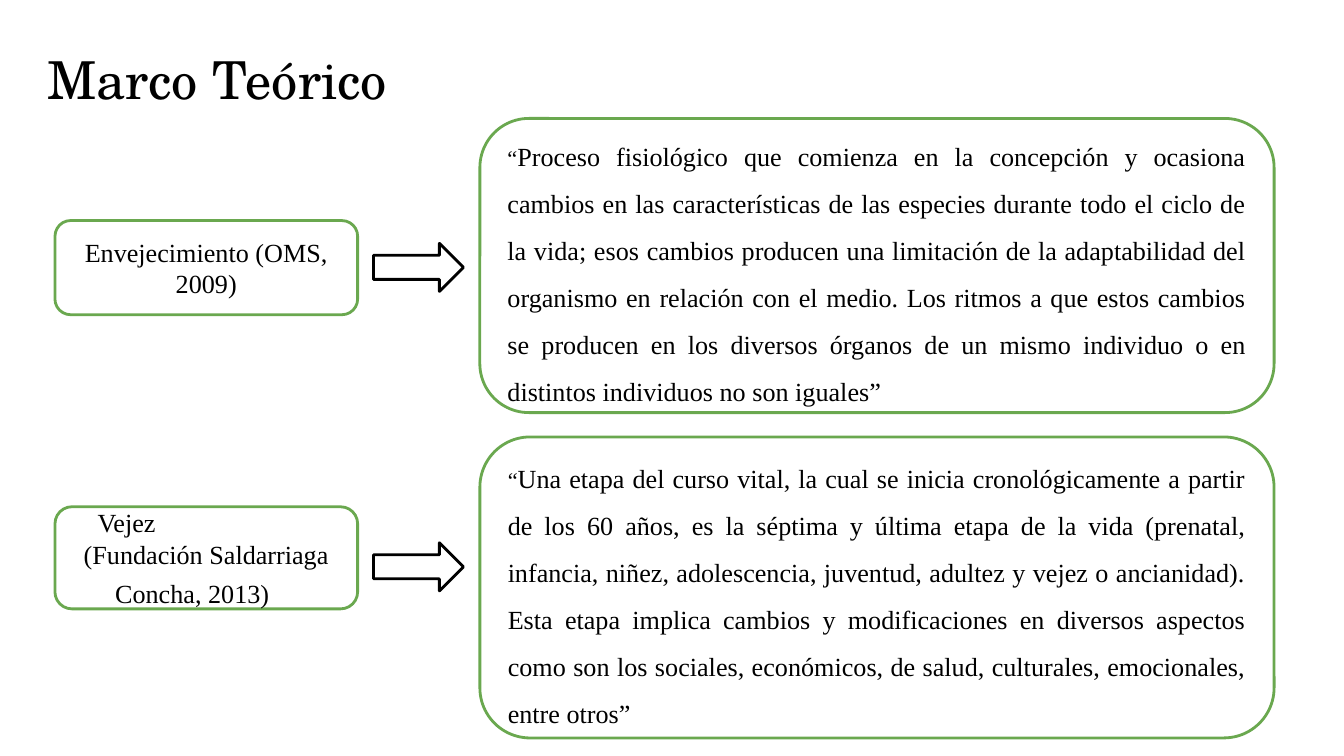
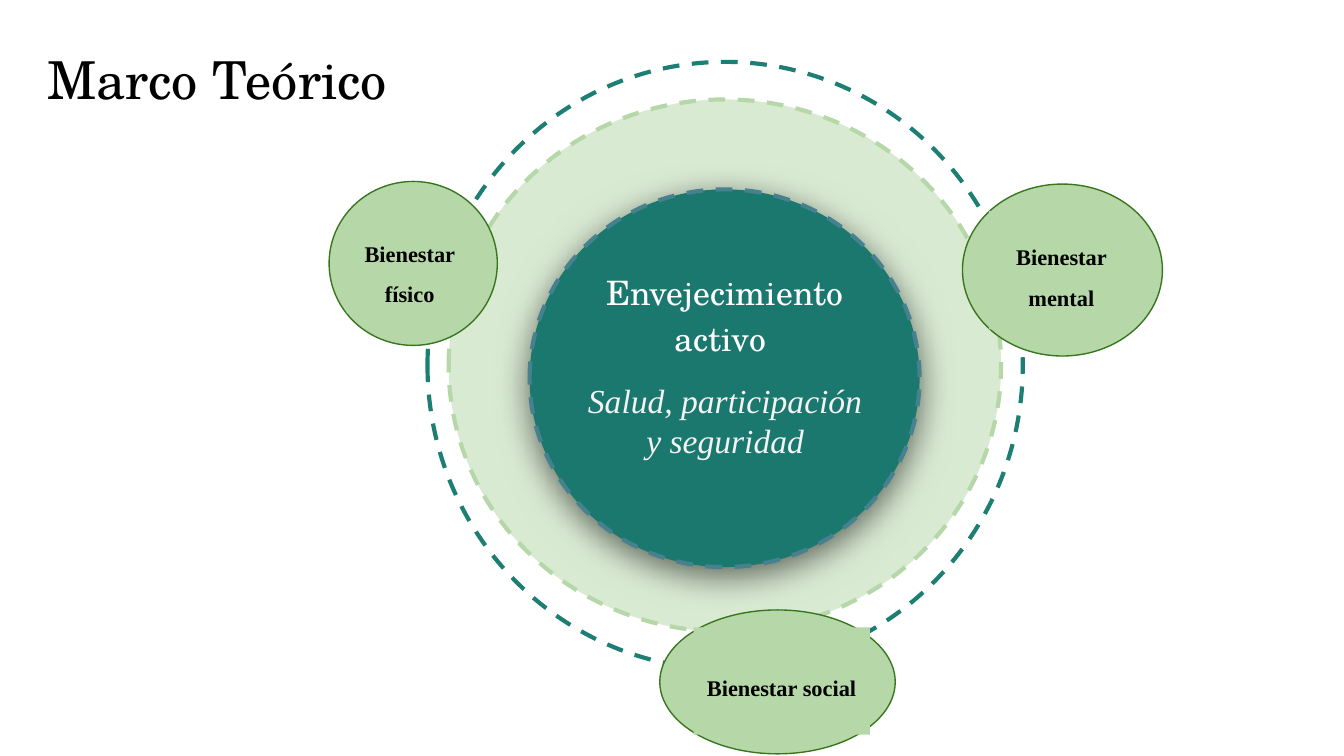
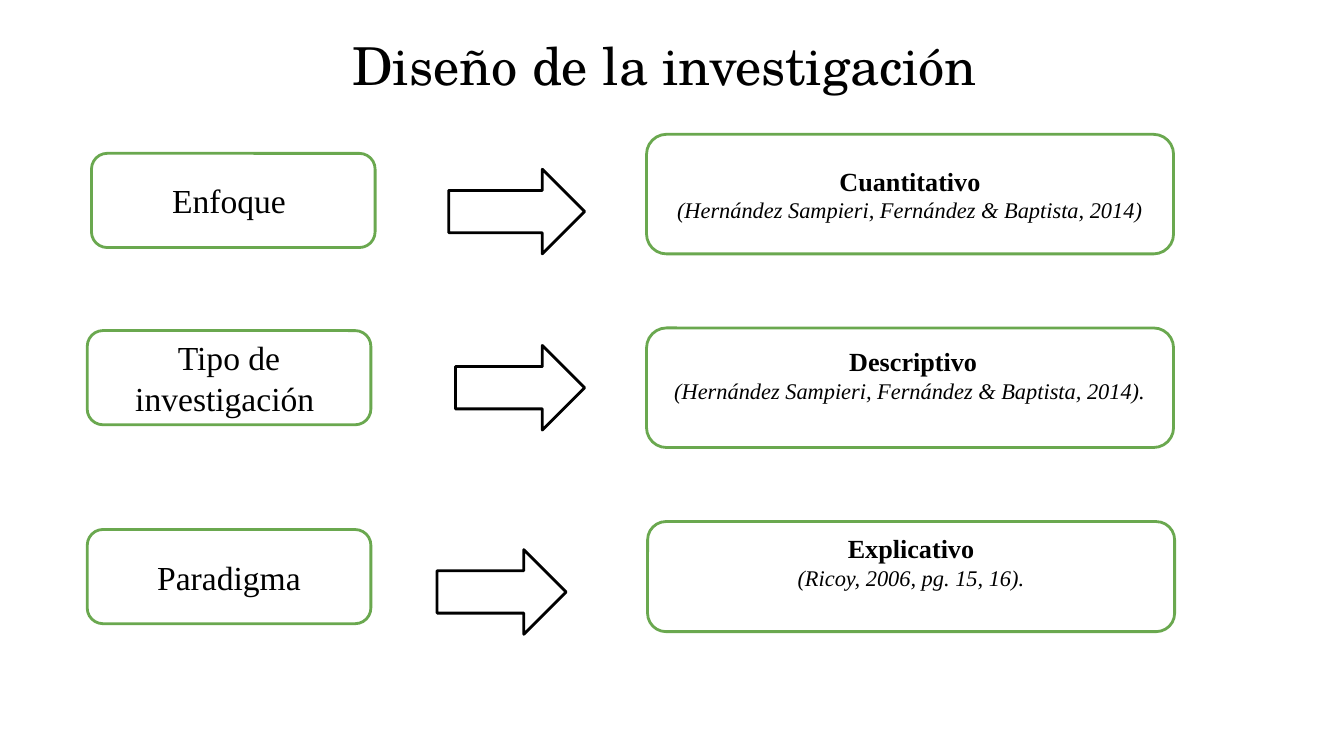
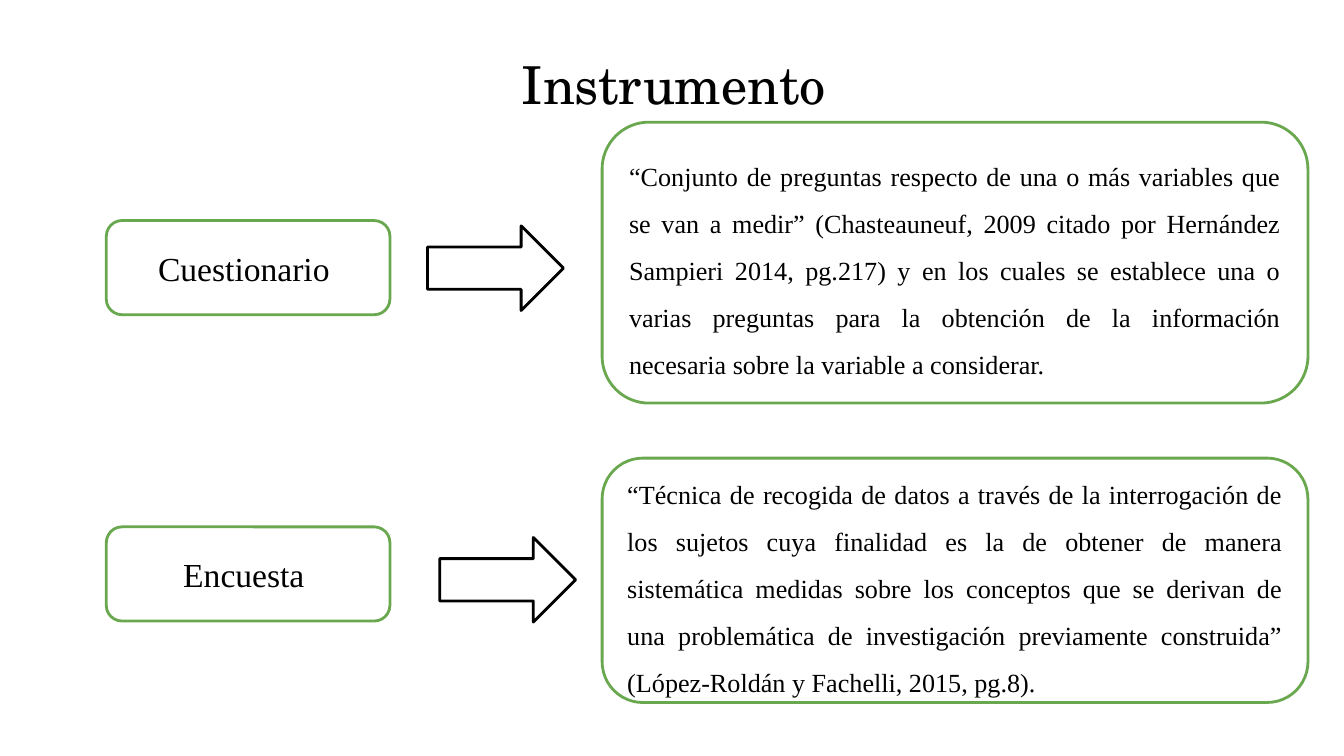
from lxml import etree
from pptx import Presentation
from pptx import util as u
from pptx.dml.color import RGBColor
from pptx.enum import dml, shapes, text
from pptx.oxml.ns import qn

GREEN, BLACK, WHITE = "6AA84F", "000000", "FFFFFF"
SAGE, LEAF = "B6D7A8", "38761D"
HEAD, BODY = "TeX Gyre Schola", "Times New Roman"
KIND = shapes.MSO_SHAPE
CENTER, LEFT, JUSTIFY = (text.PP_ALIGN.CENTER, text.PP_ALIGN.LEFT,
                         text.PP_ALIGN.JUSTIFY)
INSET = 0.25


def color(hex_value):
    return RGBColor.from_string(hex_value)


def run(words, size, font=BODY, ink=BLACK, **fmt):
    return dict(text=words, size=size, name=font, ink=ink, **fmt)


def para(*runs, align=CENTER, left=0, right=0, **fmt):
    """Describe a paragraph; left and right are its margins in cm."""
    return dict(runs=runs, left=left, right=right,
                fmt=dict(alignment=align, **fmt))


def write(sp, paras, bottom=INSET, anchor=text.MSO_ANCHOR.MIDDLE):
    tf = sp.text_frame
    frame = dict(word_wrap=True, vertical_anchor=anchor,
                 margin_left=u.Cm(INSET), margin_right=u.Cm(INSET),
                 margin_top=u.Cm(INSET), margin_bottom=u.Cm(bottom))
    for key, value in frame.items():
        setattr(tf, key, value)
    for i, spec in enumerate(paras):
        p = tf.add_paragraph() if i else tf.paragraphs[0]
        for key, value in spec["fmt"].items():
            setattr(p, key, value)
        for key, side in (("marL", "left"), ("marR", "right")):
            if spec[side]:
                p._p.get_or_add_pPr().set(key, str(u.Cm(spec[side])))
        for fmt in spec["runs"]:
            r = p.add_run()
            r.text = fmt["text"]
            r.font.color.rgb = color(fmt["ink"])
            for key, value in fmt.items():
                if key == "size":
                    r.font.size = u.Pt(value)
                elif key not in ("text", "ink"):
                    setattr(r.font, key, value)


def label(slide, box, *paras, **fmt):
    write(slide.shapes.add_textbox(*map(u.Cm, box)), paras, **fmt)


def draw(slide, kind, box, fill=None, line=None, width=1.5, dashed=False):
    sp = slide.shapes.add_shape(kind, *map(u.Cm, box))
    sp.shadow.inherit = False
    if fill:
        sp.fill.solid()
        sp.fill.fore_color.rgb = color(fill)
    else:
        sp.fill.background()
    if line:
        sp.line.color.rgb = color(line)
        sp.line.width = u.Pt(width)
        if dashed:
            sp.line.dash_style = dml.MSO_LINE.DASH
    else:
        sp.line.fill.background()
    return sp


def add_glow(sp):
    """Give the shape a soft shadow falling downwards."""
    effects = sp._element.spPr.find(qn("a:effectLst"))
    shadow = etree.SubElement(effects, qn("a:outerShdw"),
                              blurRad=str(u.Pt(18)), dist=str(u.Pt(4)),
                              dir="5400000", algn="ctr", rotWithShape="0")
    ink = etree.SubElement(shadow, qn("a:srgbClr"), val=BLACK)
    etree.SubElement(ink, qn("a:alpha"), val="55000")


def new_slide(prs, title, title_box):
    slide = prs.slides.add_slide(prs.slide_layouts[6])
    label(slide, title_box, para(run(title, 28, HEAD)),
          anchor=text.MSO_ANCHOR.TOP)
    return slide


def concept_row(slide, box, term, arrow, definition, bottom=INSET):
    """Term, arrow and definition; term and arrow give sizes and offsets
    from the row's corner, the definition fills the right of the row."""
    x, y, w, h = box
    term_dy, term_w, term_h, term_paras = term
    dx, dy, arrow_w, arrow_h = arrow
    def_w, def_paras = definition
    write(draw(slide, KIND.ROUNDED_RECTANGLE,
               (x, y + term_dy, term_w, term_h), line=GREEN), term_paras)
    draw(slide, KIND.RIGHT_ARROW, (x + dx, y + dy, arrow_w, arrow_h),
         line=BLACK)
    write(draw(slide, KIND.ROUNDED_RECTANGLE, (x + w - def_w, y, def_w, h),
               line=GREEN), def_paras, bottom)


def quote(*runs):
    return [para(*runs, align=JUSTIFY, line_spacing=1.5)]


def theory_slide(prs):
    slide = new_slide(prs, "Marco Teórico ", (0.53, 0.64, 7.42, 1.6))
    aging = [para(run("Envejecimiento (OMS, 2009)", 14))]
    old_age = [para(run("Vejez", 14), align=LEFT, left=0.46),
               para(run("(Fundación Saldarriaga", 14)),
               para(run("Concha, 2013)", 14), right=0.53,
                    space_before=u.Pt(4.5))]
    rows = [
        (2.24, 5.56, 1.93, 1.78, 2.36, aging,
         "Proceso fisiológico que comienza en la concepción y ocasiona "
         "cambios en las características de las especies durante todo el "
         "ciclo de la vida; esos cambios producen una limitación de la "
         "adaptabilidad del organismo en relación con el medio. Los ritmos "
         "a que estos cambios se producen en los diversos órganos de un "
         "mismo individuo o en distintos individuos no son iguales”"),
        (8.26, 5.69, 1.32, 1.93, 2.0, old_age,
         "Una etapa del curso vital, la cual se inicia cronológicamente a "
         "partir de los 60 años, es la séptima y última etapa de la vida "
         "(prenatal, infancia, niñez, adolescencia, juventud, adultez y "
         "vejez o ancianidad). Esta etapa implica cambios y modificaciones "
         "en diversos aspectos como son los sociales, económicos, de salud, "
         "culturales, emocionales, entre otros”"),
    ]
    for y, h, term_dy, term_h, arrow_dy, term, words in rows:
        concept_row(slide, (1.04, y, 23.04, h),
                    (term_dy, 5.72, term_h, term),
                    (6.02, arrow_dy, 1.7, 0.91),
                    (15.01, quote(run("“", 12), run(words, 14))))


def wellbeing(slide, box, inner, words):
    """An oval with a plate of the same colour, offset by inner, for text."""
    x, y = box[:2]
    dx, dy, w, h = inner
    draw(slide, KIND.OVAL, box, SAGE, LEAF, 0.75)
    write(draw(slide, KIND.RECTANGLE, (x + dx, y + dy, w, h), SAGE),
          [para(run(words, 12, bold=True), line_spacing=1.5)])


def active_aging_slide(prs):
    slide = new_slide(prs, "Marco Teórico ", (0.53, 0.64, 7.42, 1.6))
    circles = [((8.08, 1.17, 11.25, 11.48), None, "1D7E74"),
               ((8.48, 1.88, 10.44, 10.06), "D9EAD3", SAGE),
               ((10.01, 3.58, 7.37, 7.14), "1B786E", "45818E")]
    for box, fill, line in circles:
        core = draw(slide, KIND.OVAL, box, fill, line, 2.25, dashed=True)
    add_glow(core)
    label(slide, (10.97, 4.93, 5.46, 1.93),
          para(run("Envejecimiento activo ", 18, HEAD, WHITE),
               line_spacing=1.15))
    wellbeing(slide, (6.22, 3.43, 3.18, 3.1), (0.33, 0.74, 2.39, 1.75),
              "Bienestar físico")
    wellbeing(slide, (18.19, 3.48, 3.78, 3.25), (0.5, 0.51, 2.74, 2.24),
              "Bienestar mental")
    wellbeing(slide, (12.47, 11.53, 4.45, 2.72), (0.64, 0.33, 3.33, 2.03),
              "Bienestar social")
    label(slide, (10.77, 7.14, 5.87, 1.6),
          para(run("Salud, participación y seguridad", 18, ink="F3F3F3",
                   italic=True)))


def design_slide(prs):
    slide = new_slide(prs, "Diseño de la investigación ",
                      (0.86, 0.38, 23.67, 1.6))
    rows = [
        ((1.73, 2.54, 20.45, 2.26), 0.36, (6.75, 0.66, 2.57, 1.6), INSET,
         "Enfoque ", "Cuantitativo",
         "(Hernández Sampieri, Fernández & Baptista, 2014)"),
        ((1.65, 6.2, 20.53, 2.26), 0.05, (6.96, 0.33, 2.44, 1.6), 0.74,
         "Tipo de investigación ", " Descriptivo",
         "(Hernández Sampieri, Fernández & Baptista, 2014)."),
        ((1.65, 9.86, 20.55, 2.08), 0.15, (6.61, 0.53, 2.44, 1.6), 0.82,
         " Paradigma ", "Explicativo", "(Ricoy, 2006, pg. 15, 16)."),
    ]
    for box, term_dy, arrow, bottom, term, answer, citation in rows:
        concept_row(slide, box, (term_dy, 5.36, 1.78, [para(run(term, 18))]),
                    arrow,
                    (9.96, [para(run(answer, 14, bold=True)),
                            para(run(citation, 12, italic=True))]), bottom)


def instrument_slide(prs):
    slide = new_slide(prs, "Instrumento ", (1.04, 0.74, 23.67, 1.6))
    rows = [
        (2.31, 5.31, 1.86, (6.07, 1.96), "Cuestionario ",
         "“Conjunto de preguntas respecto de una o más variables que se van "
         "a medir” (Chasteauneuf, 2009 citado por Hernández Sampieri 2014, "
         "pg.217) y en los cuales se establece una o varias preguntas para "
         "la obtención de la información necesaria sobre la variable a "
         "considerar."),
        (8.66, 4.62, 1.3, (6.3, 1.5), "Encuesta ",
         "“Técnica de recogida de datos a través de la interrogación de los "
         "sujetos cuya finalidad es la de obtener de manera sistemática "
         "medidas sobre los conceptos que se derivan de una problemática de "
         "investigación previamente construida” (López-Roldán y Fachelli, "
         "2015, pg.8). "),
    ]
    for y, h, term_dy, arrow_at, term, words in rows:
        concept_row(slide, (2.01, y, 22.71, h),
                    (term_dy, 5.36, 1.78, [para(run(term, 18))]),
                    (*arrow_at, 2.57, 1.6),
                    (13.34, quote(run(words, 14))))


def main():
    prs = Presentation()
    prs.slide_width, prs.slide_height = u.Cm(25.4), u.Cm(14.29)
    for build in (theory_slide, active_aging_slide, design_slide,
                  instrument_slide):
        build(prs)
    prs.save("out.pptx")


if __name__ == "__main__":
    main()
